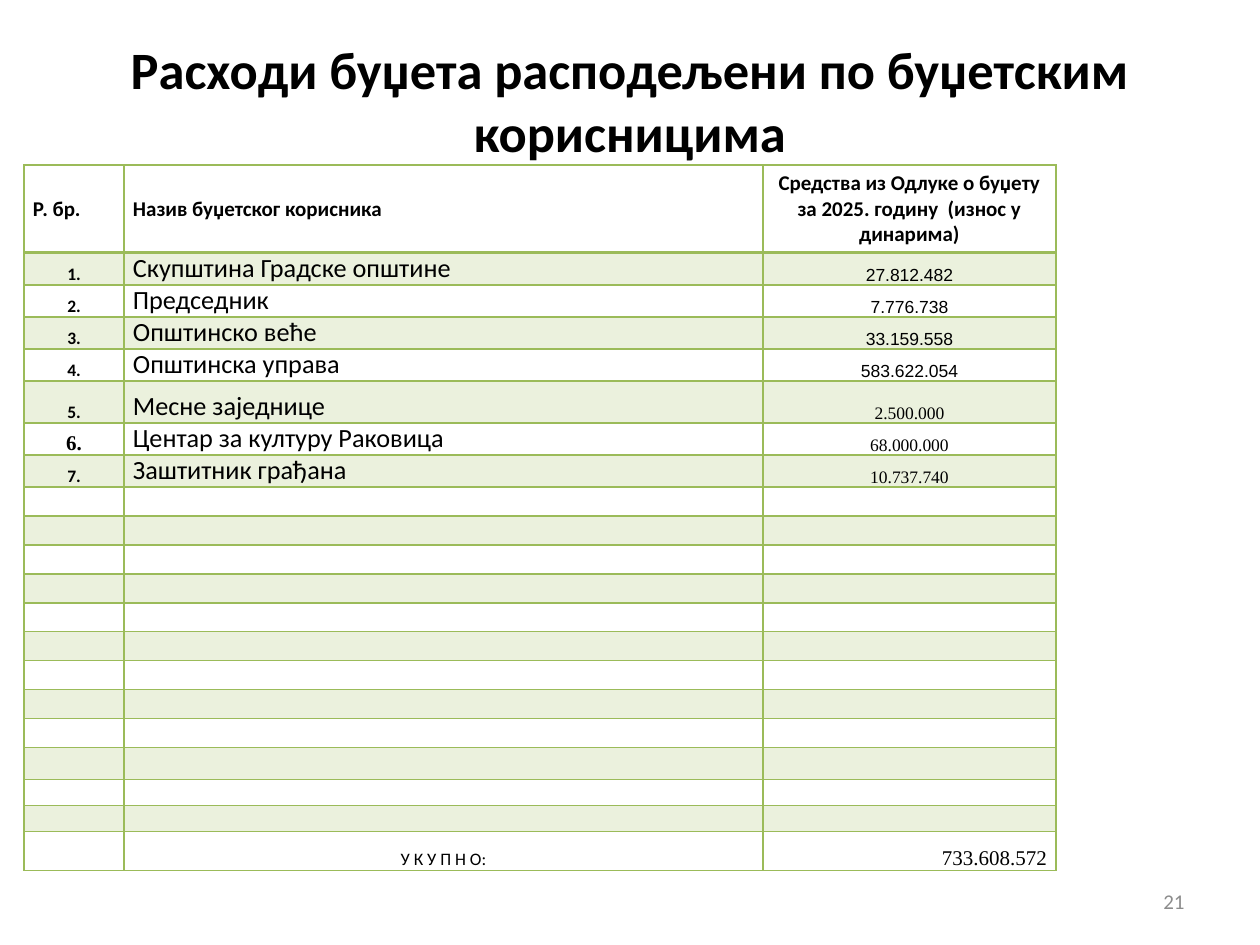
from lxml import etree
from pptx import Presentation
from pptx.dml.color import RGBColor
from pptx.enum.text import MSO_ANCHOR, PP_ALIGN
from pptx.oxml.ns import qn
from pptx.util import Pt

LEFT, CENTER, RIGHT = PP_ALIGN.LEFT, PP_ALIGN.CENTER, PP_ALIGN.RIGHT
MIDDLE, BOTTOM = MSO_ANCHOR.MIDDLE, MSO_ANCHOR.BOTTOM
EMU_PER_PX = 914400 / 126
COLORS = {"text": "000000", "green": "9BBB59", "number": "8C8C8C"}


def px(length):
    return round(length * EMU_PER_PX)


def write(para, text, align, font, size, bold=False, color="text"):
    para.alignment = align
    span = para.add_run()
    span.text = text
    look = {"name": font, "size": Pt(size), "bold": bold}
    for key, value in look.items():
        setattr(span.font, key, value)
    span.font.color.rgb = RGBColor.from_string(COLORS[color])


deck = Presentation()
deck.slide_width, deck.slide_height = px(1260), px(945)
page = deck.slides.add_slide(deck.slide_layouts[6])

# Title and page number
for text, place, align, size, bold, color in [
    ("Расходи буџета расподељени по буџетским корисницима",
     (63, 21, 1134, 158), CENTER, 30, True, "text"),
    ("21", (903, 876, 294, 50), RIGHT, 12, False, "number"),
]:
    box = page.shapes.add_textbox(*map(px, place))
    box.text_frame.word_wrap = True
    box.text_frame.vertical_anchor = MIDDLE
    write(box.text_frame.paragraphs[0], text, align, "Calibri", size, bold, color)

# Table content: number, budget user, amount
header = ["Р. бр.", "Назив буџетског корисника",
          "Средства из Одлуке о буџету за 2025. годину  (износ у динарима)"]
users = [
    ("Скупштина Градске општине", "27.812.482"),
    ("Председник", "7.776.738"),
    ("Општинско веће", "33.159.558"),
    ("Општинска управа", "583.622.054"),
    ("Месне заједнице", "2.500.000"),
    ("Центар за културу Раковица", "68.000.000"),
    ("Заштитник грађана", "10.737.740"),
]
column_widths = [100, 639, 293]
row_heights = [88] + [32] * 4 + [42] + [32] * 2 + [29] * 9 + [32, 26, 26, 39]
last_row = len(row_heights) - 1

frame = page.shapes.add_table(
    len(row_heights), len(column_widths), px(24), px(165),
    px(sum(column_widths)), px(sum(row_heights)))
table = frame.table
table.first_row = table.horz_banding = False
for column, width in zip(table.columns, column_widths):
    column.width = px(width)
for row, height in zip(table.rows, row_heights):
    row.height = px(height)

# Cell margins, borders and banding
for r in range(len(row_heights)):
    for c in range(len(column_widths)):
        cell = table.cell(r, c)
        narrow = c == 2 and 1 <= r <= 4
        cell.margin_left = cell.margin_right = px(1 if narrow else 9)
        cell.margin_top = px(1 if narrow else 0)
        cell.margin_bottom = 0
        cell.vertical_anchor = MIDDLE if r == 0 else BOTTOM

        properties = cell._tc.get_or_add_tcPr()
        for side in "LRTB":
            thick = (r == 0 and side == "B") or (r == 1 and side == "T")
            line = etree.SubElement(properties, qn(f"a:ln{side}"),
                                    w=str(Pt(2 if thick else 1)))
            paint = etree.SubElement(line, qn("a:solidFill"))
            etree.SubElement(paint, qn("a:srgbClr"), val=COLORS["green"])

        if r % 2 and r < last_row:
            cell.fill.solid()
            cell.fill.fore_color.rgb = RGBColor.from_string(COLORS["green"])
            tint = properties.find(f"{qn('a:solidFill')}/{qn('a:srgbClr')}")
            etree.SubElement(tint, qn("a:alpha"), val="20000")
        else:
            cell.fill.background()

        # Small end mark keeps the empty rows low
        if r > len(users) and (r < last_row or c == 0):
            para = cell.text_frame.paragraphs[0]
            etree.SubElement(para._p, qn("a:endParaRPr"), sz="1000")

# Cell texts: row, column, text, alignment, font, size, bold
entries = [(0, c, text, CENTER if c == 2 else LEFT, "Calibri", 12, True)
           for c, text in enumerate(header)]
for r, (user, amount) in enumerate(users, start=1):
    number_font, number_size = ("Times New Roman", 12) if r == 6 else ("Calibri", 10)
    entries += [
        (r, 0, f"{r}.", CENTER, number_font, number_size, True),
        (r, 1, user, LEFT, "Calibri", 15, False),
        (r, 2, amount, CENTER, "Arial" if r <= 4 else "Times New Roman", 10, False),
    ]
entries += [
    (last_row, 1, "У К У П Н О:", CENTER, "Calibri", 10, False),
    (last_row, 2, "733.608.572", RIGHT, "Times New Roman", 12, False),
]
for r, c, *content in entries:
    write(table.cell(r, c).text_frame.paragraphs[0], *content)

deck.save("out.pptx")
